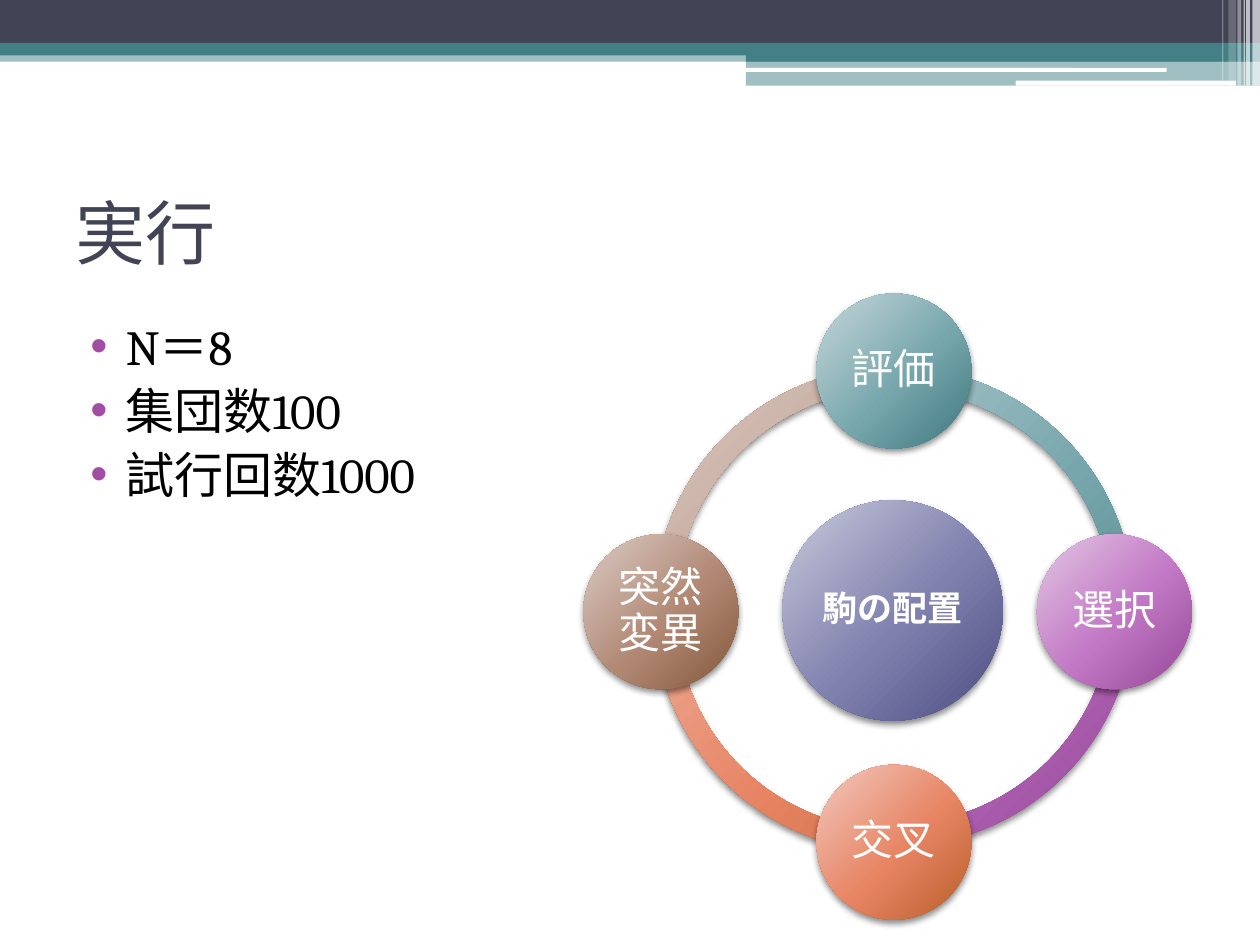
import lxml.etree
import pptx
import pptx.dml.color
import pptx.enum.shapes
import pptx.enum.text
import pptx.oxml
import pptx.util
from pptx.util import Inches

COLORS = {
    "navy": "424456",
    "teal": "438086",
    "white": "FFFFFF",
    "black": "000000",
    "bullet": "A04DA3",
}
GRADIENTS = {
    "teal": ("C7D7DA", "77A7AD", "3E777D"),
    "purple": ("E2C6E3", "C277C5", "954898"),
    "orange": ("F2C9BF", "E78463", "B75E2A"),
    "brown": ("DBCCC6", "B18874", "825739"),
    "indigo": ("C9C9DA", "7F80AE", "4D4E81"),
}
NAMESPACE = "http://schemas.openxmlformats.org/drawingml/2006/main"
SHAPE = pptx.enum.shapes.MSO_SHAPE
ALIGN = pptx.enum.text.PP_ALIGN
ANCHOR = pptx.enum.text.MSO_ANCHOR

presentation = pptx.Presentation()
presentation.slide_width = Inches(10)
presentation.slide_height = Inches(7.5)
slide = presentation.slides.add_slide(presentation.slide_layouts[6])


def add_text(shapes, lines, box, size, color="black", font="Cambria", bold=False, align=ALIGN.LEFT,
             anchor=ANCHOR.TOP, insets=(0.1, 0.05), line_spacing=None, space_before=0, bullet=False):
    text_box = shapes.add_textbox(*[Inches(length) for length in box])
    frame = text_box.text_frame
    frame.word_wrap = True
    frame.vertical_anchor = anchor
    frame.margin_left = frame.margin_right = Inches(insets[0])
    frame.margin_top = frame.margin_bottom = Inches(insets[1])
    frame.text = "\n".join(lines)
    for paragraph in frame.paragraphs:
        paragraph.alignment = align
        paragraph.line_spacing = line_spacing
        paragraph.space_before = pptx.util.Pt(space_before)
        run_font = paragraph.runs[0].font
        run_font.name = font
        run_font.size = pptx.util.Pt(size)
        run_font.bold = bold
        run_font.color.rgb = pptx.dml.color.RGBColor.from_string(COLORS[color])
        if bullet:
            properties = paragraph._p.get_or_add_pPr()
            properties.set("marL", str(Inches(0.4)))
            properties.set("indent", str(Inches(-0.28)))
            bullet_color = lxml.etree.SubElement(properties, f"{{{NAMESPACE}}}buClr")
            lxml.etree.SubElement(bullet_color, f"{{{NAMESPACE}}}srgbClr", val=COLORS["bullet"])
            lxml.etree.SubElement(properties, f"{{{NAMESPACE}}}buFont", typeface="Arial")
            lxml.etree.SubElement(properties, f"{{{NAMESPACE}}}buChar", char="•")


def add_gradient_shape(shapes, kind, box, gradient):
    shape = shapes.add_shape(kind, *[Inches(length) for length in box])
    shape.line.fill.background()
    stops = "".join(
        f'<a:gs pos="{position}"><a:srgbClr val="{color}"/></a:gs>'
        for position, color in zip((0, 55000, 100000), GRADIENTS[gradient])
    )
    fill = pptx.oxml.parse_xml(
        f'<a:gradFill xmlns:a="{NAMESPACE}" rotWithShape="1"><a:gsLst>{stops}</a:gsLst>'
        '<a:path path="circle"><a:fillToRect l="-40000" t="-90000" r="140000" b="190000"/></a:path>'
        '</a:gradFill>'
    )
    shadow = pptx.oxml.parse_xml(
        f'<a:effectLst xmlns:a="{NAMESPACE}"><a:outerShdw blurRad="50800" dist="25400" dir="5400000" '
        f'rotWithShape="0"><a:srgbClr val="{COLORS["black"]}"><a:alpha val="45000"/></a:srgbClr>'
        '</a:outerShdw></a:effectLst>'
    )
    shape._element.spPr.find(f"{{{NAMESPACE}}}prstGeom").addnext(fill)
    shape._element.spPr.append(shadow)
    return shape


header_bars = [
    (SHAPE.RECTANGLE, (0, 0.4, 10, 0.09), "teal", 50),
    (SHAPE.RECTANGLE, (0, 0, 10, 0.34), "navy", 100),
    (SHAPE.RECTANGLE, (0, 0.34, 10, 0.1), "teal", 100),
    (SHAPE.RECTANGLE, (5.92, 0.39, 4.08, 0.1), "teal", 100),
    (SHAPE.RECTANGLE, (5.92, 0.48, 4.08, 0.2), "teal", 50),
    (SHAPE.ROUNDED_RECTANGLE, (5.91, 0.54, 3.35, 0.03), "white", 100),
    (SHAPE.ROUNDED_RECTANGLE, (8.06, 0.64, 1.75, 0.04), "white", 100),
]
edge_stripes = [
    (9.94, 0.06, 0.68, 65),
    (9.89, 0.03, 0.68, 65),
    (9.87, 0.01, 0.68, 60),
    (9.82, 0.03, 0.68, 40),
    (9.75, 0.06, 0.64, 20),
    (9.7, 0.01, 0.64, 30),
]
for left, width, height, opacity in edge_stripes:
    header_bars.append((SHAPE.RECTANGLE, (left, 0, width, height), "white", opacity))

for kind, box, color, opacity in header_bars:
    bar = slide.shapes.add_shape(kind, *[Inches(length) for length in box])
    bar.shadow.inherit = False
    bar.line.fill.background()
    bar.fill.solid()
    bar.fill.fore_color.rgb = pptx.dml.color.RGBColor.from_string(COLORS[color])
    if opacity < 100:
        bar_color = bar._element.spPr.find(f".//{{{NAMESPACE}}}srgbClr")
        lxml.etree.SubElement(bar_color, f"{{{NAMESPACE}}}alpha", val=str(opacity * 1000))

add_text(slide.shapes, ["実行"], (0.5, 1.25, 9, 1.17), 40, color="navy", font="Cabin", anchor=ANCHOR.MIDDLE)
add_text(slide.shapes, ["N＝8", "集団数100", "試行回数1000"], (0.5, 2.46, 9, 4.73), 28,
         space_before=3, bullet=True)

ring_arcs = [
    ("teal", 2.91, 162, 0),
    ("purple", 2.91, 0, 54),
    ("orange", 2.95, 54, 108),
    ("brown", 2.91, 108, 162),
]
for gradient, top, start, end in ring_arcs:
    arc = add_gradient_shape(slide.shapes, SHAPE.BLOCK_ARC, (5.19, top, 3.81, 3.81), gradient)
    for index, value in enumerate((start, end, 0.046)):
        arc.adjustments[index] = value

cycle_nodes = [
    ("評価", "teal", 6.48, 2.33, 1.23, 0.18, 24, False),
    ("選択", "purple", 8.23, 4.24, 1.23, 0.18, 24, False),
    ("交叉", "orange", 6.48, 6.07, 1.23, 0.18, 24, False),
    ("突然変異", "brown", 4.63, 4.24, 1.23, 0.18, 24, False),
    ("駒の配置", "indigo", 6.21, 3.97, 1.75, 0.26, 20, True),
]
for label, gradient, left, top, diameter, inset, size, bold in cycle_nodes:
    group = slide.shapes.add_group_shape()
    add_gradient_shape(group.shapes, SHAPE.OVAL, (left, top, diameter, diameter), gradient)
    side = diameter - 2 * inset
    add_text(group.shapes, [label], (left + inset, top + inset, side, side), size, color="white", bold=bold,
             align=ALIGN.CENTER, anchor=ANCHOR.MIDDLE, insets=(0.03, 0.03), line_spacing=0.9)

presentation.save("out.pptx")
